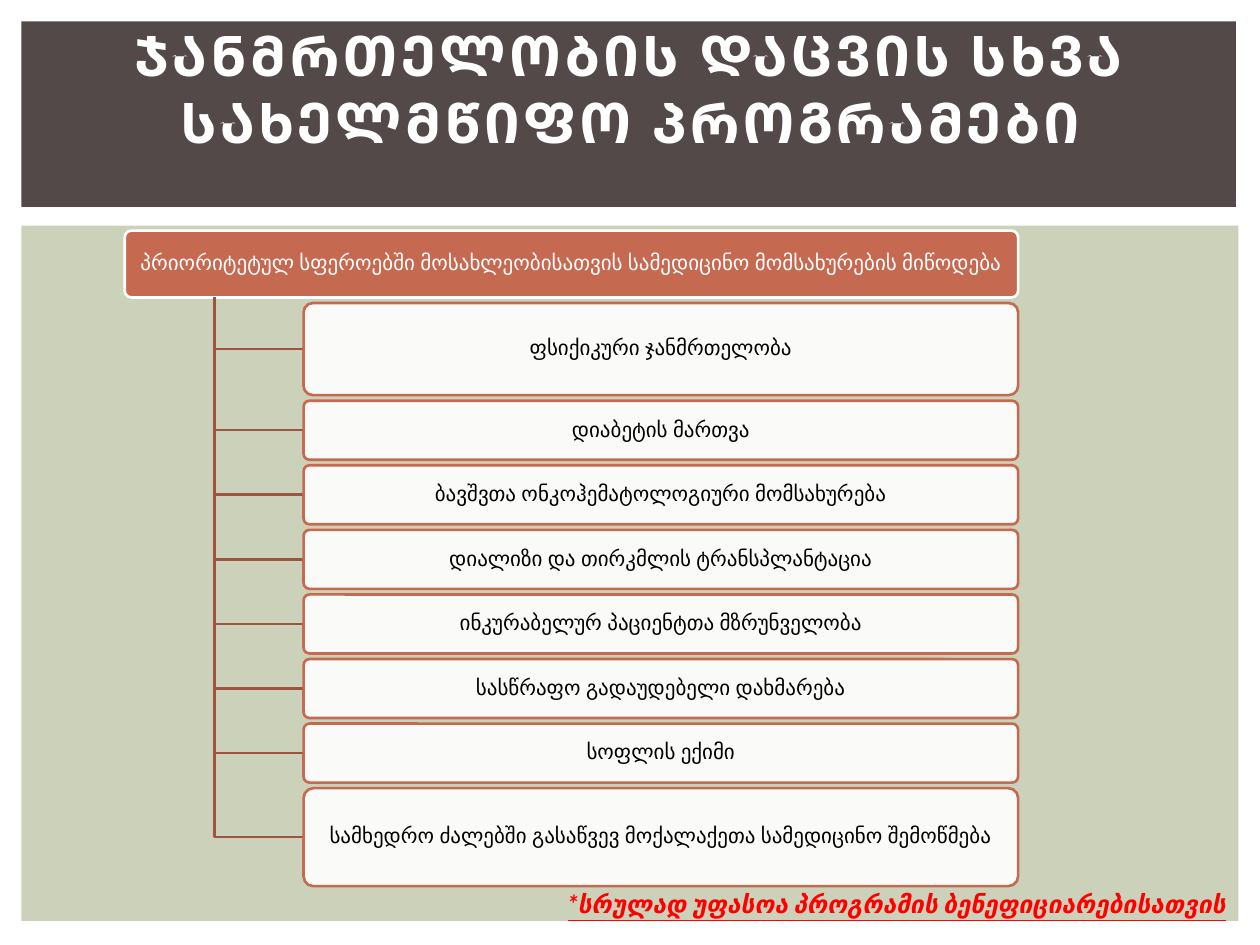
"""Build a slide listing the state health care programmes as a hierarchy."""
from pptx import Presentation
from pptx.dml.color import RGBColor
from pptx.enum.shapes import MSO_SHAPE
from pptx.enum.text import MSO_ANCHOR, PP_ALIGN
from pptx.oxml.ns import qn
from pptx.util import Pt

RECTANGLE = MSO_SHAPE.RECTANGLE
ROUNDED = MSO_SHAPE.ROUNDED_RECTANGLE
MIDDLE = MSO_ANCHOR.MIDDLE
CENTER = PP_ALIGN.CENTER
RIGHT = PP_ALIGN.RIGHT

FONT = "Lato"
WHITE = "FFFFFF"
ACCENT = "C66951"
BRANCH = "9F5441"
GAP = 3.2
ROOT_LEFT, ROOT_TOP, ROOT_HEIGHT = 71.3, 131.8, 38.2
TRUNK_X, CHILD_LEFT, CHILD_WIDTH = 122.4, 173.5, 408.3
CHILD_RIGHT = CHILD_LEFT + CHILD_WIDTH

PROGRAMMES = [
    ("ფსიქიკური ჯანმრთელობა", 52.6),
    ("დიაბეტის მართვა", 33.7),
    ("ბავშვთა ონკოჰემატოლოგიური მომსახურება", 33.7),
    ("დიალიზი და თირკმლის ტრანსპლანტაცია", 33.7),
    ("ინკურაბელურ პაციენტთა მზრუნველობა", 33.7),
    ("სასწრაფო გადაუდებელი დახმარება", 33.7),
    ("სოფლის ექიმი", 33.7),
    ("სამხედრო ძალებში გასაწვევ მოქალაქეთა სამედიცინო შემოწმება", 56),
]


def color(hex_string):
    return RGBColor.from_string(hex_string)


def write(shape, text, size, text_color, alignment=CENTER):
    text_frame = shape.text_frame
    text_frame.word_wrap = True
    text_frame.text = text
    paragraph = text_frame.paragraphs[0]
    paragraph.alignment = alignment
    run = paragraph.runs[0]
    run.font.name = FONT
    run.font.size = Pt(size)
    run.font.color.rgb = color(text_color)
    return run


presentation = Presentation()
presentation.slide_width = Pt(720)
presentation.slide_height = Pt(540)
slide = presentation.slides.add_slide(presentation.slide_layouts[6])
shapes = slide.shapes

for top, width, height, fill in [(128.9, 695.5, 397.4, "CCD1B9"), (12.2, 694, 106, "534949")]:
    panel = shapes.add_shape(RECTANGLE, Pt(12.2), Pt(top), Pt(width), Pt(height))
    panel.shadow.inherit = False
    panel.fill.solid()
    panel.fill.fore_color.rgb = color(fill)
    panel.line.fill.background()

root_text = "პრიორიტეტულ სფეროებში მოსახლეობისათვის სამედიცინო მომსახურების მიწოდება"
boxes = [(root_text, ROOT_LEFT, ROOT_TOP, ROOT_HEIGHT, ACCENT, WHITE, WHITE)]
child_top = ROOT_TOP + ROOT_HEIGHT + GAP
for text, height in PROGRAMMES:
    boxes.append((text, CHILD_LEFT, child_top, height, WHITE, ACCENT, "000000"))
    child_top += height + GAP

for text, left, top, height, fill, outline, text_color in boxes:
    is_child = left == CHILD_LEFT
    if is_child:
        middle = top + height / 2
        builder = shapes.build_freeform(Pt(TRUNK_X), Pt(ROOT_TOP + ROOT_HEIGHT))
        builder.add_line_segments(
            [(Pt(TRUNK_X), Pt(middle)), (Pt(CHILD_LEFT), Pt(middle))], close=False)
        branch = builder.convert_to_shape()
        branch.shadow.inherit = False
        branch.fill.background()
        branch.line.color.rgb = color(BRANCH)
        branch.line.width = Pt(1.5)

    box = shapes.add_shape(ROUNDED, Pt(left), Pt(top), Pt(CHILD_RIGHT - left), Pt(height))
    box.adjustments[0] = 0.1
    box.shadow.inherit = False
    box.fill.solid()
    box.fill.fore_color.rgb = color(fill)
    if is_child:
        fill_color = box._element.spPr.find(qn("a:solidFill")).find(qn("a:srgbClr"))
        fill_color.makeelement(qn("a:alpha"), {})
        alpha = fill_color.makeelement(qn("a:alpha"), {"val": "90000"})
        fill_color.append(alpha)
    box.line.color.rgb = color(outline)
    box.line.width = Pt(1.5)
    write(box, text, 12, text_color)
    text_frame = box.text_frame
    text_frame.vertical_anchor = MIDDLE
    text_frame.margin_left = text_frame.margin_right = Pt(2.2)
    text_frame.margin_top = text_frame.margin_bottom = Pt(1.4)
    text_frame.paragraphs[0].line_spacing = 0.9

title = shapes.add_textbox(Pt(30.2), Pt(28.1), Pt(660.2), Pt(82.8))
title_run = write(title, "ᲯᲐᲜᲛᲠᲗᲔᲚᲝᲑᲘᲡ ᲓᲐᲪᲕᲘᲡ ᲡᲮᲕᲐ ᲡᲐᲮᲔᲚᲛᲬᲘᲤᲝ ᲞᲠᲝᲒᲠᲐᲛᲔᲑᲘ", 32, WHITE)
title_run.font.bold = True
title_run._r.get_or_add_rPr().set("spc", "200")
title.text_frame.vertical_anchor = MIDDLE
title.text_frame.margin_bottom = Pt(42.8)

footnote = shapes.add_textbox(Pt(180), Pt(504.7), Pt(527.8), Pt(24.5))
footnote_run = write(
    footnote, "*სრულად უფასოა პროგრამის ბენეფიციარებისათვის", 14, "FF0000", RIGHT)
footnote_run.font.bold = True
footnote_run.font.italic = True
footnote_run.font.underline = True

presentation.save("out.pptx")
